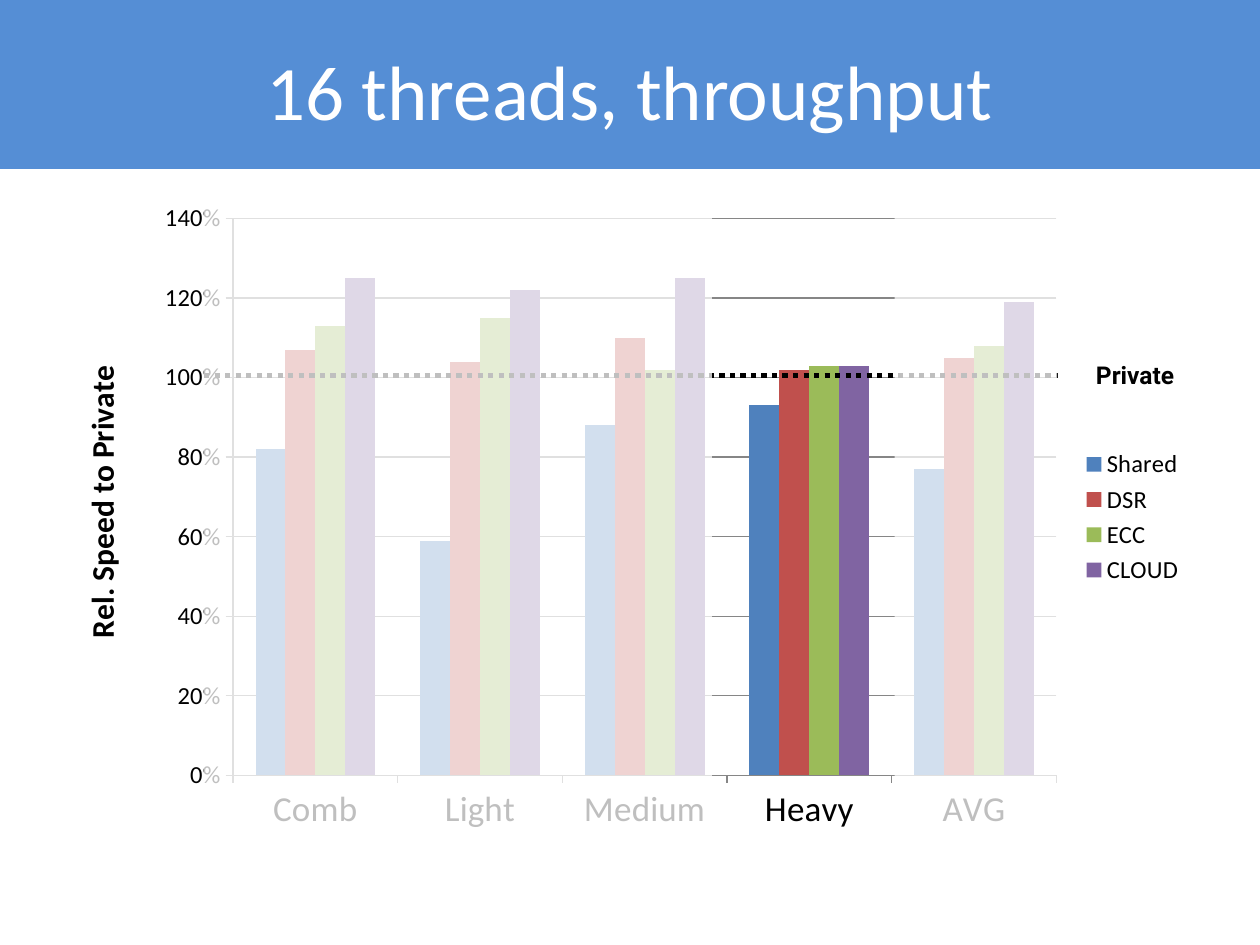
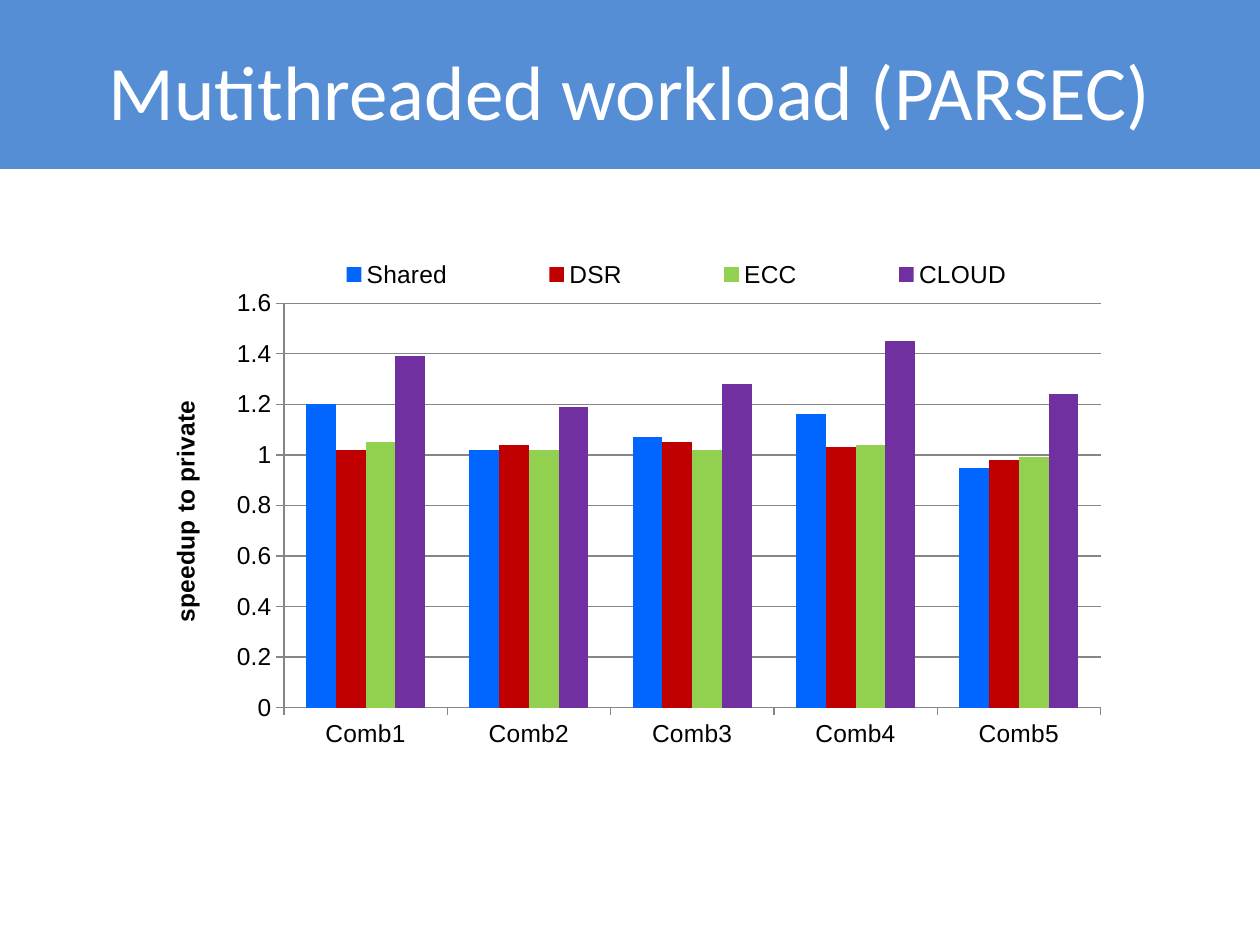
from lxml.etree import SubElement
from pptx import Presentation
from pptx.chart.data import CategoryChartData
from pptx.dml.color import RGBColor
from pptx.enum.chart import XL_CHART_TYPE, XL_LEGEND_POSITION, XL_TICK_MARK
from pptx.enum.dml import MSO_LINE
from pptx.enum.shapes import MSO_CONNECTOR, MSO_SHAPE
from pptx.enum.text import MSO_ANCHOR, PP_ALIGN
from pptx.oxml import parse_xml
from pptx.oxml.ns import nsdecls, qn
from pptx.util import Inches, Pt

COLORS = {"band": "558ED5", "white": "FFFFFF", "black": "000000", "grid": "868686"}
SERIES = ["Shared", "DSR", "ECC", "CLOUD"]
OFFICE_COLORS = ["4F81BD", "C0504D", "9BBB59", "8064A2"]
VIVID_COLORS = ["0066FF", "C00000", "92D050", "7030A0"]


def rgb(name):
    return RGBColor.from_string(COLORS.get(name, name))


def set_layout(part, before=None, inner=False, **fractions):
    """Give a chart part a fixed place, in fractions of the chart frame."""
    for old in part.findall(qn("c:layout")):
        part.remove(old)
    layout = parse_xml(f"<c:layout {nsdecls('c')}><c:manualLayout/></c:layout>")
    entries = [("layoutTarget", "inner")] if inner else []
    entries += [(f"{axis}Mode", "edge") for axis in "xy"]
    entries += fractions.items()
    for tag, value in entries:
        SubElement(layout[0], qn(f"c:{tag}")).set("val", str(value))
    if before is None:
        part.insert(0, layout)
    else:
        part.find(qn(before)).addnext(layout)


class Deck:
    def __init__(self):
        self.prs = Presentation()
        self.prs.slide_width, self.prs.slide_height = Inches(10), Inches(7.5)
        self.layout = self.prs.slide_layouts[5]
        self.s = None
        self.has_band = False

    def slide(self, title):
        self.s = self.prs.slides.add_slide(self.layout)
        if not self.has_band:
            # The band belongs to the layout, behind every title
            band = self.rect(0, 0, 10, 1.34, "band")
            self.layout.shapes.element.insert(2, band.element)
            self.has_band = True
        sp = self.s.shapes.title
        sp.left, sp.top, sp.width, sp.height = map(Inches, (0.5, 0.09, 9, 1.25))
        sp.text_frame.vertical_anchor = MSO_ANCHOR.MIDDLE
        p = sp.text_frame.paragraphs[0]
        p.alignment = PP_ALIGN.CENTER
        self.run(p, title, 44, "Calibri", "white")

    def run(self, p, text, size, font, color, bold=False):
        r = p.add_run()
        r.text = text
        r.font.size, r.font.name, r.font.bold = Pt(size), font, bold
        r.font.color.rgb = rgb(color)

    def rect(self, x, y, w, h, color, opacity=None):
        sp = self.s.shapes.add_shape(MSO_SHAPE.RECTANGLE, *map(Inches, (x, y, w, h)))
        sp.shadow.inherit = False
        sp.fill.solid()
        sp.fill.fore_color.rgb = rgb(color)
        sp.line.fill.background()
        if opacity:
            fill = sp.element.spPr.find(qn("a:solidFill"))
            SubElement(fill[0], qn("a:alpha")).set("val", str(opacity * 1000))
        return sp

    def dotted_line(self, x1, y1, x2, y2):
        ln = self.s.shapes.add_connector(
            MSO_CONNECTOR.STRAIGHT, *map(Inches, (x1, y1, x2, y2)))
        ln.line.color.rgb = rgb("black")
        ln.line.width = Pt(3)
        ln.line.dash_style = MSO_LINE.ROUND_DOT
        SubElement(ln.element.spPr, qn("a:effectLst"))

    def label(self, x, y, w, h, text):
        tf = self.s.shapes.add_textbox(*map(Inches, (x, y, w, h))).text_frame
        tf.word_wrap = True
        self.run(tf.paragraphs[0], text, 14, "Roboto", "black", bold=True)

    def columns(self, box, cats, rows, colors, font, axis_title, title_size,
                title_at, plot, cat_size=14, fmt="General", legend_at=None):
        data = CategoryChartData()
        data.categories = cats
        for name, values in zip(SERIES, rows):
            data.add_series(name, values)
        chart = self.s.shapes.add_chart(
            XL_CHART_TYPE.COLUMN_CLUSTERED, *map(Inches, box), data).chart
        chart.has_title = False
        chart.font.size, chart.font.name = Pt(14), font
        chart.font.color.rgb = rgb("black")

        # Columns
        bars = chart.plots[0]
        bars.gap_width, bars.overlap, bars.vary_by_categories = 150, 0, False
        for series, color in zip(bars.series, colors):
            series.format.fill.solid()
            series.format.fill.fore_color.rgb = rgb(color)

        # Axes
        cat, val = chart.category_axis, chart.value_axis
        cat.tick_labels.font.size = Pt(cat_size)
        val.minimum_scale, val.maximum_scale, val.major_unit = 0, 1.6, 0.2
        if fmt == "0%":
            val.maximum_scale = 1.4
        val.tick_labels.number_format = fmt
        val.tick_labels.number_format_is_linked = False
        val.has_major_gridlines = True
        for axis in (cat, val):
            axis.major_tick_mark = XL_TICK_MARK.OUTSIDE
        for line in (cat.format.line, val.format.line, val.major_gridlines.format.line):
            line.color.rgb = rgb("grid")
            line.width = Pt(0.75)
        p = val.axis_title.text_frame.paragraphs[0]
        self.run(p, axis_title, title_size, font, "black", bold=True)

        # Legend and places inside the frame
        chart.has_legend = True
        chart.legend.position = XL_LEGEND_POSITION.RIGHT
        chart.legend.include_in_layout = False
        set_layout(val.axis_title.element, "c:tx", **title_at)
        set_layout(chart.element.xpath("c:chart/c:plotArea")[0], inner=True, **plot)
        if legend_at:
            legend = chart.element.xpath("c:chart/c:legend")[0]
            set_layout(legend, "c:legendPos", **legend_at)


def main():
    deck = Deck()

    # Throughput, with all but the Heavy group faded
    deck.slide("16 threads, throughput")
    deck.columns(
        (0.5, 1.51, 9, 5.19), ["Comb", "Light", "Medium", "Heavy", "AVG"],
        [[0.82, 0.59, 0.88, 0.93, 0.77], [1.07, 1.04, 1.1, 1.02, 1.05],
         [1.13, 1.15, 1.02, 1.03, 1.08], [1.25, 1.22, 1.25, 1.03, 1.19]],
        OFFICE_COLORS, "Calibri", "Rel. Speed to Private", 18,
        title_at=dict(x=0.01, y=0.26), plot=dict(x=0.15, y=0.043, w=0.726, h=0.852),
        cat_size=20, fmt="0%")
    deck.dotted_line(1.62, 2.98, 8.4, 2.98)
    deck.label(8.6, 2.81, 0.9, 0.34, "Private")
    for left, width in ((1.62, 4.03), (7.1, 1.29)):
        deck.rect(left, 1.51, width, 5.33, "white", opacity=75)

    # PARSEC speedups
    deck.slide("Mutithreaded workload (PARSEC)")
    deck.columns(
        (1, 1.96, 7.74, 4.39), [f"Comb{i}" for i in range(1, 6)],
        [[1.2, 1.02, 1.07, 1.16, 0.95], [1.02, 1.04, 1.05, 1.03, 0.98],
         [1.05, 1.02, 1.02, 1.04, 0.99], [1.39, 1.19, 1.28, 1.45, 1.24]],
        VIVID_COLORS, "Arial", "speedup to private", 14,
        title_at=dict(x=0.04, y=0.27), plot=dict(x=0.162, y=0.102, w=0.838, h=0.731),
        legend_at=dict(x=0.13, y=0, w=0.87, h=0.1))

    deck.prs.save("out.pptx")


if __name__ == "__main__":
    main()
